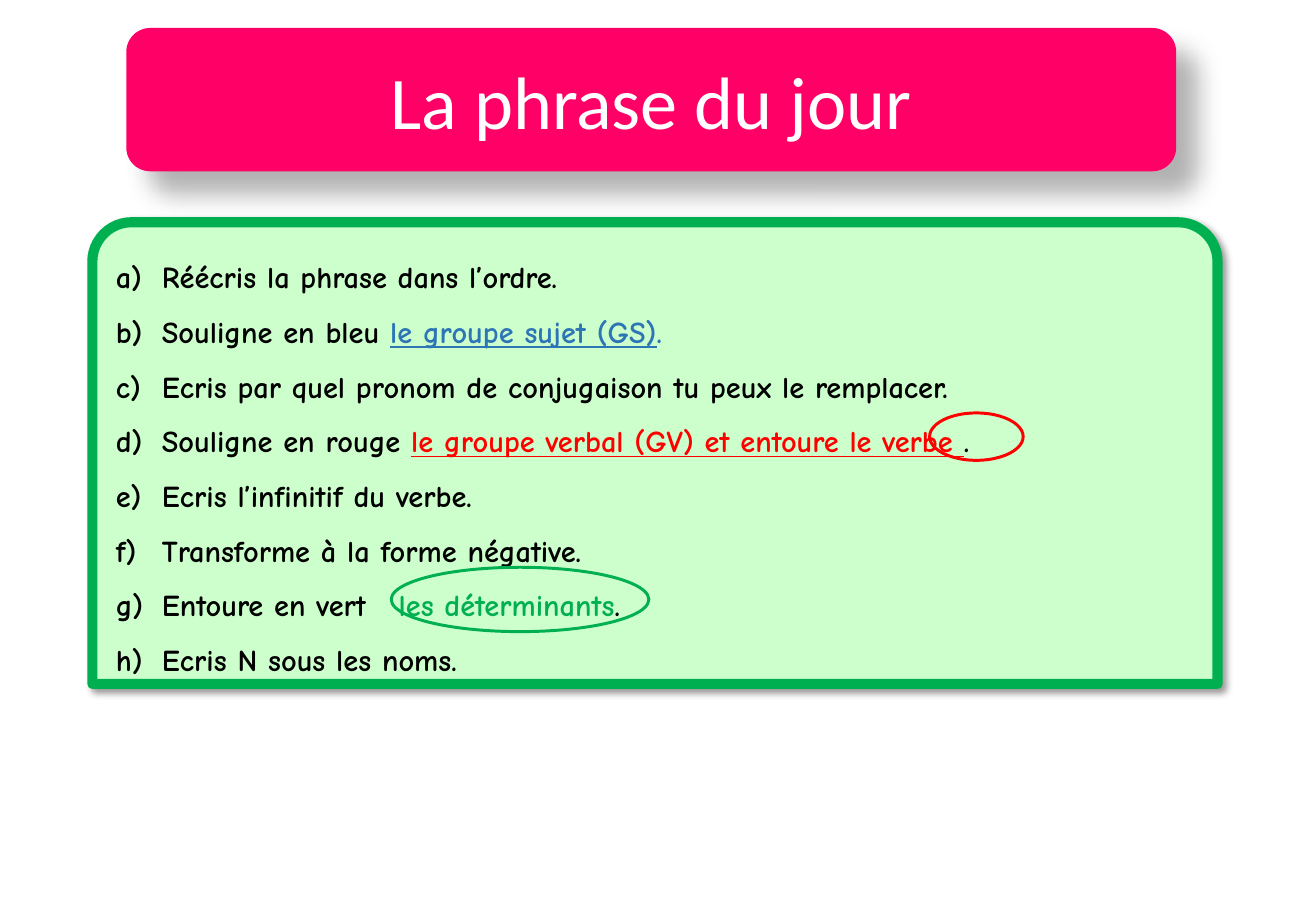
"""Build the "La phrase du jour" exercise slide."""
from pptx import Presentation
from pptx.dml.color import RGBColor
from pptx.enum.shapes import MSO_SHAPE as Shape
from pptx.enum.text import MSO_ANCHOR as Anchor, PP_ALIGN as Align
from pptx.oxml import parse_xml
from pptx.oxml.ns import nsdecls
from pptx.util import Inches, Pt

THEME = {
    "pink": RGBColor(0xFF, 0x00, 0x66),
    "mint": RGBColor(0xCC, 0xFF, 0xCC),
    "green": RGBColor(0x00, 0xB0, 0x50),
    "red": RGBColor(0xFF, 0x00, 0x00),
    "blue": RGBColor(0x2E, 0x75, 0xB6),
    "black": RGBColor(0x00, 0x00, 0x00),
    "white": RGBColor(0xFF, 0xFF, 0xFF),
    "title": {"name": "Calibri", "size": Pt(44)},
    "body": {"name": "Comic Neue", "size": Pt(18), "bold": True},
}
INDENT = Inches(0.38)
WIDE_SPACE = Pt(13)

presentation = Presentation()
presentation.slide_width, presentation.slide_height = Inches(10.83), Inches(7.5)
slide = presentation.slides.add_slide(presentation.slide_layouts[6])


def add_panel(kind, percents, fill=None, line=None, weight=0, shadow=None):
    """Add a shape placed by percentages of the slide's width and height."""
    sides = (presentation.slide_width, presentation.slide_height) * 2
    shape = slide.shapes.add_shape(
        kind, *(int(side * percent / 100) for side, percent in zip(sides, percents)))
    shape.shadow.inherit = False
    if fill:
        shape.fill.solid()
        shape.fill.fore_color.rgb = THEME[fill]
    else:
        shape.fill.background()
    if line:
        shape.line.color.rgb = THEME[line]
        shape.line.width = Pt(weight)
    else:
        shape.line.fill.background()
    if shadow:
        opacity, blur, distance = shadow
        shape._element.spPr.find("{*}effectLst").append(parse_xml(
            f'<a:outerShdw {nsdecls("a")} blurRad="{Pt(blur)}" dist="{Pt(distance)}" '
            'dir="2700000" algn="tl" rotWithShape="0"><a:srgbClr val="000000">'
            f'<a:alpha val="{opacity * 1000}"/></a:srgbClr></a:outerShdw>'))
    shape.text_frame.vertical_anchor = Anchor.MIDDLE
    shape.text_frame.word_wrap = True
    return shape


def add_run(paragraph, text, color, style, underline=False):
    """Append a run in one of the theme's type styles."""
    run = paragraph.add_run()
    run.text = text
    for name, value in {**THEME[style], "underline": underline}.items():
        setattr(run.font, name, value)
    run.font.color.rgb = THEME[color]
    return run


instructions = [
    [("Réécris la phrase dans l’ordre.", "black")],
    [("Souligne en bleu ", "black"), ("le groupe sujet (GS)", "blue", True), (".", "blue")],
    [("Ecris par quel pronom de conjugaison tu peux le remplacer.", "black")],
    [("Souligne en rouge ", "black"),
     ("le groupe verbal (GV) et entoure le verbe ", "red", True), (".", "black")],
    [("Ecris l’infinitif du verbe.", "black")],
    [("Transforme à la forme négative.", "black")],
    [("Entoure en vert", "black"), (" ", "black"),
     ("les déterminants", "green"), (".", "black")],
    [("Ecris N sous les noms.", "black")],
]

board = add_panel(Shape.ROUND_2_SAME_RECTANGLE, (7.02, 24.4, 85.5, 50.67),
                  "mint", "green", 6, shadow=(40, 4, 3))
board.adjustments[0] = 0.085
for index, pieces in enumerate(instructions):
    frame = board.text_frame
    paragraph = frame.add_paragraph() if index else frame.paragraphs[0]
    paragraph.alignment = Align.LEFT
    paragraph.line_spacing = 1.5
    properties = paragraph._p.get_or_add_pPr()
    properties.set("marL", str(INDENT))
    properties.set("indent", str(-INDENT))
    properties.append(parse_xml(f'<a:buAutoNum {nsdecls("a")} type="alphaLcParenR"/>'))
    for text, color, *underline in pieces:
        run = add_run(paragraph, text, color, "body", bool(underline))
        if text == " ":
            run.font._element.set("spc", str(int(WIDE_SPACE.pt * 100)))

banner = add_panel(Shape.ROUNDED_RECTANGLE, (9.6, 3.07, 79.78, 15.73),
                   "pink", shadow=(30, 15, 18))
heading = banner.text_frame.paragraphs[0]
heading.alignment = Align.CENTER
add_run(heading, "La phrase du jour", "white", "title")

for color, percents in (("red", (70.64, 45.33, 7.11, 5.2)),
                        ("green", (29.73, 62.27, 19.58, 7.07))):
    add_panel(Shape.OVAL, percents, line=color, weight=1.75)

presentation.save("out.pptx")
